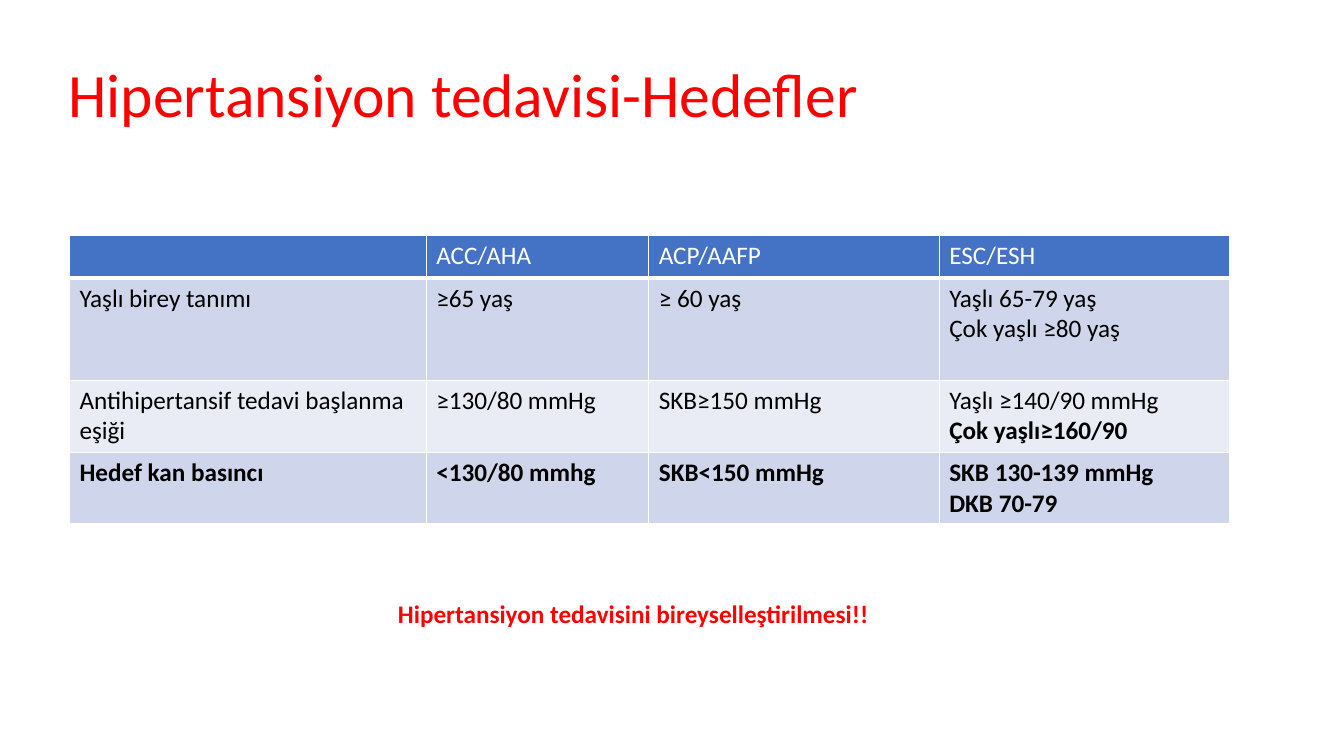
"""Build the slide on treatment targets for hypertension in older people."""
from lxml.etree import SubElement
from pptx import Presentation
from pptx.dml.color import RGBColor
from pptx.enum.text import MSO_ANCHOR, MSO_AUTO_SIZE, PP_ALIGN
from pptx.oxml.ns import qn
from pptx.util import Cm, Pt

RED = RGBColor(0xFF, 0x00, 0x00)
WHITE = RGBColor(0xFF, 0xFF, 0xFF)
BLACK = RGBColor(0x00, 0x00, 0x00)
HEADER_BLUE = RGBColor(0x44, 0x72, 0xC4)
BAND_DARK = RGBColor(0xCF, 0xD5, 0xEA)
BAND_LIGHT = RGBColor(0xE9, 0xEB, 0xF5)


def write(para, text, size=18, color=BLACK, bold=False):
    para.alignment = PP_ALIGN.LEFT
    span = para.add_run()
    span.text = text
    span.font.name = "Calibri"
    span.font.size = Pt(size)
    span.font.bold = bold
    span.font.color.rgb = color


def add_border(cell, side, width):
    line = SubElement(cell._tc.get_or_add_tcPr(), qn(f"a:ln{side}"), w=str(Pt(width)))
    fill = SubElement(line, qn("a:solidFill"))
    SubElement(fill, qn("a:srgbClr"), val=str(WHITE))


deck = Presentation()
deck.slide_width = Cm(33.87)
deck.slide_height = Cm(19.05)
page = deck.slides.add_slide(deck.slide_layouts[5])

title = page.shapes.title
title.left, title.top, title.width, title.height = Cm(1.47), Cm(0.43), Cm(27.94), Cm(4.04)
title.text_frame.vertical_anchor = MSO_ANCHOR.MIDDLE
title.text_frame.auto_size = MSO_AUTO_SIZE.NONE
title.text_frame.paragraphs[0].line_spacing = 0.9
write(title.text_frame.paragraphs[0], "Hipertansiyon tedavisi-Hedefler", size=44, color=RED)

rows = [
    ["", "ACC/AHA", "ACP/AAFP", "ESC/ESH"],
    ["Yaşlı birey tanımı", "≥65 yaş", "≥ 60 yaş", "Yaşlı 65-79 yaş\nÇok yaşlı ≥80 yaş"],
    ["Antihipertansif tedavi başlanma eşiği", "≥130/80 mmHg", "SKB≥150 mmHg",
     "Yaşlı ≥140/90 mmHg\nÇok yaşlı≥160/90"],
    ["Hedef kan basıncı", "<130/80 mmhg", "SKB<150 mmHg", "SKB 130-139 mmHg\nDKB 70-79"],
]
column_widths = [8.99, 5.61, 7.32, 7.32]
row_heights = [1.07, 2.57, 1.82, 1.78]
row_fills = [HEADER_BLUE, BAND_DARK, BAND_LIGHT, BAND_DARK]

frame = page.shapes.add_table(len(rows), len(column_widths), Cm(1.75), Cm(5.94),
                              Cm(sum(column_widths)), Cm(sum(row_heights)))
targets = frame.table
for column, width in zip(targets.columns, column_widths):
    column.width = Cm(width)
for row_number, texts in enumerate(rows):
    targets.rows[row_number].height = Cm(row_heights[row_number])
    for column_number, text in enumerate(texts):
        cell = targets.cell(row_number, column_number)
        add_border(cell, "L", 1)
        add_border(cell, "R", 1)
        add_border(cell, "T", 3 if row_number == 1 else 1)
        add_border(cell, "B", 3 if row_number == 0 else 1)
        cell.fill.solid()
        cell.fill.fore_color.rgb = row_fills[row_number]
        if not text:
            continue
        for line_number, line in enumerate(text.split("\n")):
            paragraphs = cell.text_frame.paragraphs
            para = cell.text_frame.add_paragraph() if line_number else paragraphs[0]
            write(para, line, color=WHITE if row_number == 0 else BLACK,
                  bold=row_number == 3 or line.startswith("Çok yaşlı≥160"))

box = page.shapes.add_textbox(Cm(9.78), Cm(14.96), Cm(16.54), Cm(1.02))
box.text_frame.word_wrap = True
box.text_frame.auto_size = MSO_AUTO_SIZE.SHAPE_TO_FIT_TEXT
write(box.text_frame.paragraphs[0], "Hipertansiyon tedavisini bireyselleştirilmesi!!",
      color=RED, bold=True)

deck.save("out.pptx")
